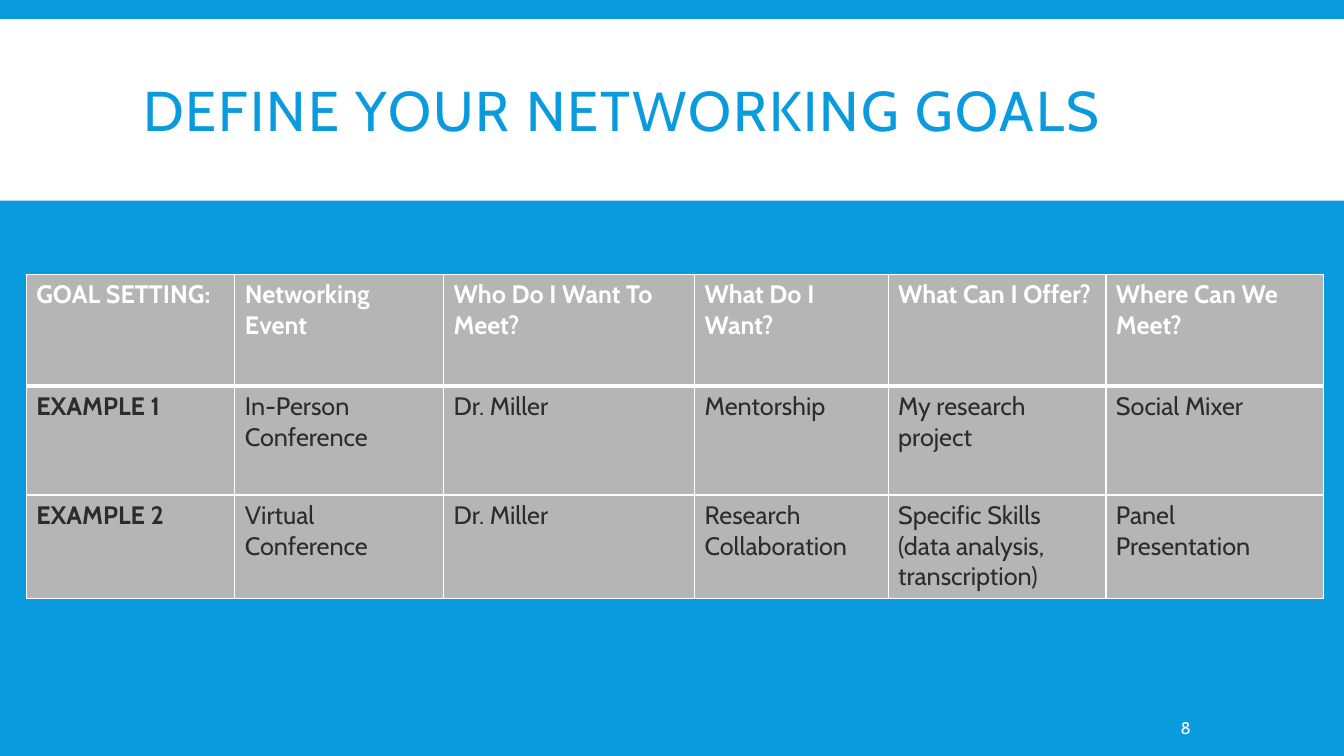
from lxml import etree
from pptx import Presentation
from pptx.dml.color import RGBColor
from pptx.enum.shapes import MSO_SHAPE as Shape
from pptx.enum.text import MSO_ANCHOR as Anchor, MSO_AUTO_SIZE as AutoSize, PP_ALIGN as Align
from pptx.oxml.ns import qn
from pptx.util import Inches, Pt

BLUE = RGBColor(0x09, 0x9B, 0xDD)
WHITE = RGBColor(0xFF, 0xFF, 0xFF)
GRAY = RGBColor(0xB5, 0xB5, 0xB5)
DARK = RGBColor(0x2C, 0x2C, 0x2C)
FONT = "Cabin"

GOALS = [
    ["GOAL SETTING:", "Networking Event", "Who Do I Want To Meet?",
     "What Do I Want?", "What Can I Offer?", "Where Can We Meet?"],
    ["EXAMPLE 1", "In-Person Conference", "Dr. Miller",
     "Mentorship", "My research project", "Social Mixer"],
    ["EXAMPLE 2", "Virtual Conference", "Dr. Miller", "Research Collaboration",
     "Specific Skills (data analysis, transcription)", "Panel Presentation"],
]
COLUMN_WIDTHS = [2.07, 2.07, 2.49, 1.92, 2.16, 2.16]
ROW_HEIGHTS = [1.11, 1.08, 1.03]


def write(frame, text, size, color, bold=False):
    """Fill a text frame with one left-aligned run and return the run."""
    paragraph = frame.paragraphs[0]
    paragraph.alignment = Align.LEFT
    run = paragraph.add_run()
    run.text = text
    for name, value in {"name": FONT, "size": Pt(size), "bold": bold}.items():
        setattr(run.font, name, value)
    run.font.color.rgb = color
    return run


def place(shape, left, top, width, height):
    box = {"left": left, "top": top, "width": width, "height": height}
    for name, value in box.items():
        setattr(shape, name, Inches(value))


def add_heading(slide, left, top, width, height):
    """White band with the title placeholder inside it."""
    band = slide.shapes.add_shape(
        Shape.RECTANGLE, Inches(left), Inches(top), Inches(width), Inches(height))
    band.shadow.inherit = False
    band.fill.solid()
    band.fill.fore_color.rgb = WHITE
    band.line.fill.background()

    title = slide.shapes.title
    title._element.addprevious(band._element)
    place(title, left + 1.32, top + 0.12, 10.7, height - 0.15)
    frame = title.text_frame
    settings = {"vertical_anchor": Anchor.MIDDLE, "word_wrap": True,
                "auto_size": AutoSize.NONE}
    for name, value in settings.items():
        setattr(frame, name, value)
    run = write(frame, "DEFINE YOUR NETWORKING GOALS", 40, BLUE)
    run.font._element.set("spc", "150")
    frame.paragraphs[0].line_spacing = 0.85


def add_borders(cell, widths):
    """Draw white borders; widths maps L, R, T and B to points."""
    properties = cell._tc.get_or_add_tcPr()
    for position, (side, width) in enumerate(widths.items()):
        line = etree.Element(qn(f"a:ln{side}"), w=str(Pt(width)))
        fill = etree.SubElement(line, qn("a:solidFill"))
        etree.SubElement(fill, qn("a:srgbClr"), val=str(WHITE))
        properties.insert(position, line)


def add_goals_table(slide, left, top):
    table = slide.shapes.add_table(
        len(ROW_HEIGHTS), len(COLUMN_WIDTHS), Inches(left), Inches(top),
        Inches(sum(COLUMN_WIDTHS)), Inches(sum(ROW_HEIGHTS))).table
    for column, width in zip(table.columns, COLUMN_WIDTHS):
        column.width = Inches(width)
    for row, height in zip(table.rows, ROW_HEIGHTS):
        row.height = Inches(height)
    for r, goal in enumerate(GOALS):
        for c, text in enumerate(goal):
            cell = table.cell(r, c)
            cell.fill.solid()
            cell.fill.fore_color.rgb = GRAY
            write(cell.text_frame, text, 18, DARK if r else WHITE, r == 0 or c == 0)
            add_borders(cell, {"L": 1, "R": 1, "T": 3 if r == 1 else 1,
                               "B": 3 if r == 0 else 1})


def add_page_number(slide, left, top, width, height):
    frame = slide.shapes.add_textbox(
        Inches(left), Inches(top), Inches(width), Inches(height)).text_frame
    settings = {"word_wrap": True, "vertical_anchor": Anchor.MIDDLE,
                "margin_left": Inches(0.05)}
    for name, value in settings.items():
        setattr(frame, name, value)
    write(frame, "8", 12, WHITE)


def main():
    deck = Presentation()
    deck.slide_width = Inches(13.33)
    deck.slide_height = Inches(7.5)
    slide = deck.slides.add_slide(deck.slide_layouts.get_by_name("Title Only"))
    slide.background.fill.solid()
    slide.background.fill.fore_color.rgb = BLUE
    add_heading(slide, 0, 0.19, 13.33, 1.8)
    add_goals_table(slide, 0.26, 2.72)
    add_page_number(slide, 11.66, 7.02, 1.03, 0.4)
    deck.save("out.pptx")


if __name__ == "__main__":
    main()
